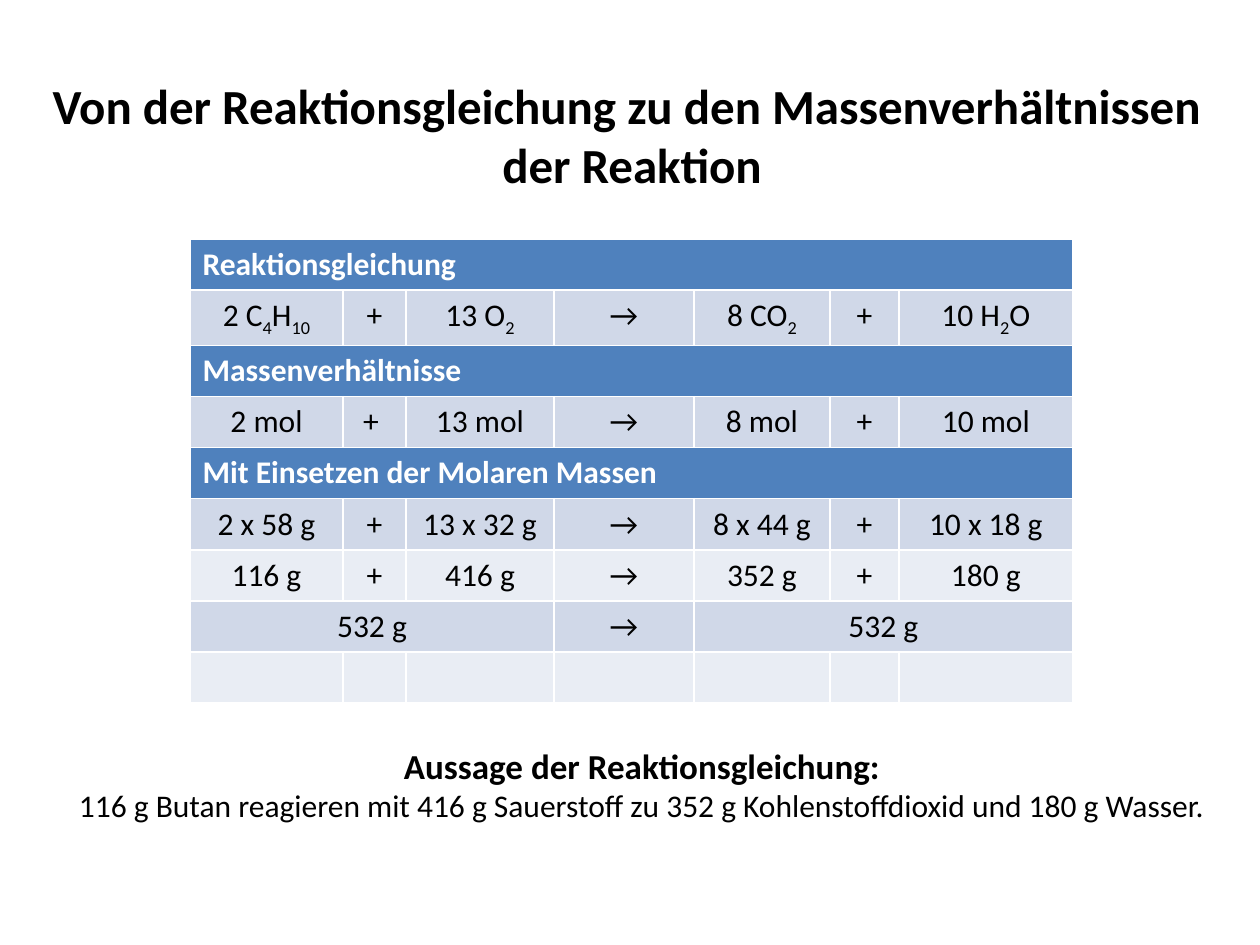
import pptx
import pptx.util
import pptx.dml.color
import pptx.enum.text
from dataclasses import dataclass

Align = pptx.enum.text.PP_ALIGN


@dataclass(frozen=True)
class Theme:
    font: str = "Calibri"
    ink: str = "000000"
    white: str = "FFFFFF"
    head: str = "4F81BD"
    bands: tuple = ("E9EDF4", "D0D8E8")
    title: int = 28
    lead: int = 20
    body: int = 18


class Deck:
    scale = 914400 / 126

    def __init__(self, theme, width, height):
        self.theme = theme
        self.prs = pptx.Presentation()
        self.prs.slide_width = self.emu(width)
        self.prs.slide_height = self.emu(height)
        self.slide = self.prs.slides.add_slide(self.prs.slide_layouts[5])

    def emu(self, px):
        return pptx.util.Emu(round(px * self.scale))

    def place(self, shape, box):
        for name, px in zip(("left", "top", "width", "height"), box):
            setattr(shape, name, self.emu(px))

    def label(self, para, text, size, color, bold, align):
        para.alignment = align
        for i, part in enumerate(text.split("|")):
            run = para.add_run()
            run.text = part
            look = {"name": self.theme.font, "size": pptx.util.Pt(size), "bold": bold}
            for key, value in look.items():
                setattr(run.font, key, value)
            run.font.color.rgb = pptx.dml.color.RGBColor.from_string(color)
            if i % 2:
                run.font._element.set("baseline", "-25000")

    def fill(self, shape, lines):
        frame = shape.text_frame
        look = {
            "word_wrap": False,
            "auto_size": pptx.enum.text.MSO_AUTO_SIZE.NONE,
            "vertical_anchor": pptx.enum.text.MSO_ANCHOR.TOP,
        }
        for key, value in look.items():
            setattr(frame, key, value)
        for i, (text, size, bold) in enumerate(lines):
            para = frame.add_paragraph() if i else frame.paragraphs[0]
            self.label(para, text, size, self.theme.ink, bold, Align.CENTER)

    def title(self, box, lines):
        shape = self.slide.shapes.title
        self.place(shape, box)
        self.fill(shape, [(line, self.theme.title, True) for line in lines])

    def text(self, box, lines):
        shape = self.slide.shapes.add_textbox(*map(self.emu, box))
        self.fill(shape, lines)

    def table(self, left, top, widths, high, rows):
        theme = self.theme
        box = (left, top, sum(widths), high * len(rows))
        grid = self.slide.shapes.add_table(
            len(rows), len(widths), *map(self.emu, box)).table
        grid.horz_banding = False
        for col, width in zip(grid.columns, widths):
            col.width = self.emu(width)
        spans = {1: (7,), 3: (3, 1, 3), 7: (1,) * 7}
        for r, row in enumerate(rows):
            grid.rows[r].height = self.emu(high)
            head = len(row) == 1
            shade = theme.head if head else theme.bands[r % 2]
            color = theme.white if head else theme.ink
            align = Align.LEFT if head else Align.CENTER
            c = 0
            for text, span in zip(row, spans[len(row)]):
                cell = grid.cell(r, c)
                if span > 1:
                    cell.merge(grid.cell(r, c + span - 1))
                cell.fill.solid()
                cell.fill.fore_color.rgb = pptx.dml.color.RGBColor.from_string(shade)
                if text:
                    para = cell.text_frame.paragraphs[0]
                    self.label(para, text, theme.body, color, head, align)
                c += span


def terms(a, b, c, d, plus="+"):
    return [a, plus, b, "→", c, "+", d]


def main():
    theme = Theme()
    deck = Deck(theme, 1260, 945)
    deck.table(190, 239, (153, 63, 148, 140, 136, 69, 174), 51, [
        ["Reaktionsgleichung"],
        terms("2 C|4|H|10", "13 O|2", "8 CO|2", "10 H|2|O"),
        ["Massenverhältnisse"],
        terms("2 mol", "13 mol", "8 mol", "10 mol", "+ "),
        ["Mit Einsetzen der Molaren Massen"],
        terms("2 x 58 g", "13 x 32 g", "8 x 44 g", "10 x 18 g"),
        terms("116 g", "416 g", "352 g", "180 g"),
        ["532 g", "→", "532 g"],
        [""] * 7,
    ])
    deck.title((33, 69, 1198, 131), [
        "Von der Reaktionsgleichung zu den Massenverhältnissen ",
        "der Reaktion",
    ])
    deck.text((59, 738, 1166, 93), [
        ("Aussage der Reaktionsgleichung:", theme.lead, True),
        ("116 g Butan reagieren mit 416 g Sauerstoff zu 352 g Kohlenstoffdioxid "
         "und 180 g Wasser.", theme.body, False),
    ])
    deck.prs.save("out.pptx")


if __name__ == "__main__":
    main()
